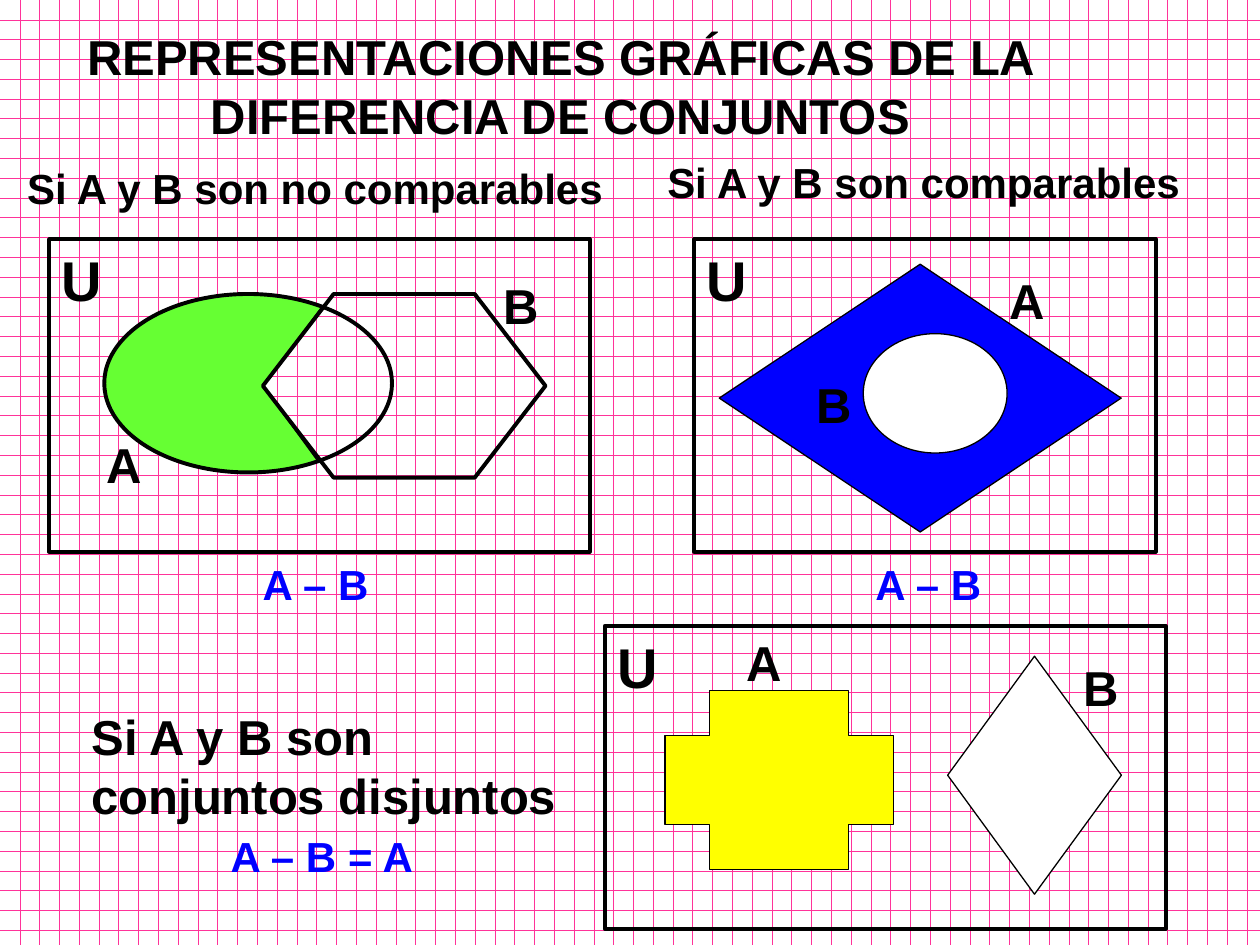
from math import cos, radians, sin

from lxml.etree import SubElement
from pptx import Presentation
from pptx.dml.color import RGBColor
from pptx.enum.dml import MSO_PATTERN_TYPE as Pattern
from pptx.enum.shapes import MSO_SHAPE as Shape
from pptx.enum.text import PP_ALIGN as Align
from pptx.oxml.ns import qn
from pptx.util import Pt

BLACK, BLUE, WHITE = "000000", "0000FF", "FFFFFF"
GREEN, YELLOW, PINK = "66FF33", "FFFF00", "FF3399"
THICK, THIN = 2.25, 0.75

# Boxes are left, top, width, height in points
UNIVERSES = [
    (28, 136.6, 309, 178.6),
    (396.8, 136.6, 263.6, 178.6),
    (345.6, 357.7, 320.6, 173),
]
SET_A = (59.6, 168, 164.4, 102)
SET_B = (150.2, 168, 161.5, 105)
ARC = range(59, 300, 12)  # part of A's outline outside B, in degrees
NOTCH = (150.2, 220.5)  # left corner of B

# Shape, box, fill, line width, adjustment
SETS = [
    (Shape.HEXAGON, SET_B, None, THICK, 0.385),
    (Shape.OVAL, SET_A, None, THICK, None),
    (Shape.DIAMOND, (411, 151, 229.7, 153), BLUE, THIN, None),
    (Shape.OVAL, (493.3, 190.7, 82.2, 68.2), WHITE, THIN, None),
    (Shape.DIAMOND, (541.5, 375, 99.3, 136), WHITE, THIN, None),
    (Shape.CROSS, (380, 394.7, 130.4, 102.1), YELLOW, THIN, 0.25),
]

# Text, box, format
HEADINGS = [
    ("REPRESENTACIONES GRÁFICAS DE LA DIFERENCIA DE CONJUNTOS",
     (14.2, 11.8, 612, 74.2), {"align": Align.CENTER}),
    ("Si A y B son no comparables", (8.5, 89.4, 351.5, 36), {"size": 24}),
    ("Si A y B son comparables", (374.2, 85.8, 317.5, 36), {"size": 24}),
    ("Si A y B son conjuntos disjuntos", (45.2, 400.2, 286.5, 74.2), {}),
]
RESULTS = [
    ("A – B", (143, 315.4, 80, 36)),
    ("A – B", (493.2, 315.4, 80, 36)),
    ("A – B = A", (124.7, 471.3, 130.4, 36)),
]
# Letter, left, top, width
SET_NAMES = [
    ("A", 54, 244.8, 70.6), ("A", 569.5, 151, 70.6), ("A", 419.6, 357.7, 70.6),
    ("B", 612, 372, 39.6), ("B", 280.6, 154, 70.6), ("B", 459.4, 210.4, 70.6),
]


def rgb(color):
    return RGBColor.from_string(color)


def style(sp, fill, width):
    sp.shadow.inherit = False
    if fill:
        sp.fill.solid()
        sp.fill.fore_color.rgb = rgb(fill)
    else:
        sp.fill.background()
    sp.line.color.rgb = rgb(BLACK)
    sp.line.width = Pt(width)


def add_set(slide, kind, box, fill=None, width=THICK, adjust=None):
    sp = slide.shapes.add_shape(kind, *map(Pt, box))
    if adjust is not None:
        sp.adjustments[0] = adjust
    style(sp, fill, width)


def add_text(slide, text, box, size=28, color=BLACK, align=Align.LEFT):
    tf = slide.shapes.add_textbox(*map(Pt, box)).text_frame
    tf.word_wrap = True
    p = tf.paragraphs[0]
    p.alignment = align
    # Space before as half of the line height
    before = SubElement(p._p.get_or_add_pPr(), qn("a:spcBef"))
    SubElement(before, qn("a:spcPct"), val="50000")
    r = p.add_run()
    r.text = text
    r.font.name, r.font.size, r.font.bold = "Arial", Pt(size), True
    r.font.color.rgb = rgb(color)


def add_difference(slide):
    """Shade the part of ellipse A that lies outside hexagon B."""
    left, top, width, height = SET_A
    rx, ry = width / 2, height / 2
    points = [(left + rx + rx * cos(radians(a)), top + ry - ry * sin(radians(a)))
              for a in ARC]
    # Tenths of a point keep the outline exact
    start, *rest = [(round(x * 10), round(y * 10)) for x, y in [NOTCH, *points]]
    builder = slide.shapes.build_freeform(*start, scale=Pt(1) / 10)
    builder.add_line_segments(rest, close=True)
    style(builder.convert_to_shape(), GREEN, THIN)


def main():
    prs = Presentation()
    prs.slide_width, prs.slide_height = Pt(720), Pt(540)
    slide = prs.slides.add_slide(prs.slide_layouts[6])

    # Grid background
    fill = slide.background.fill
    fill.patterned()
    fill.pattern = Pattern.DOTTED_GRID
    fill.fore_color.rgb, fill.back_color.rgb = rgb(PINK), rgb(WHITE)

    # Diagrams
    add_difference(slide)
    for box in UNIVERSES:
        add_set(slide, Shape.RECTANGLE, box)
    for item in SETS:
        add_set(slide, *item)

    # Labels
    for left, top, *_ in UNIVERSES:
        add_text(slide, "U", (left, top, 42.5, 45.4), size=32)
    for name, left, top, width in SET_NAMES:
        add_text(slide, name, (left, top, width, 41))

    # Headings and results
    for text, box, fmt in HEADINGS:
        add_text(slide, text, box, **fmt)
    for text, box in RESULTS:
        add_text(slide, text, box, size=24, color=BLUE)

    prs.save("out.pptx")


if __name__ == "__main__":
    main()
